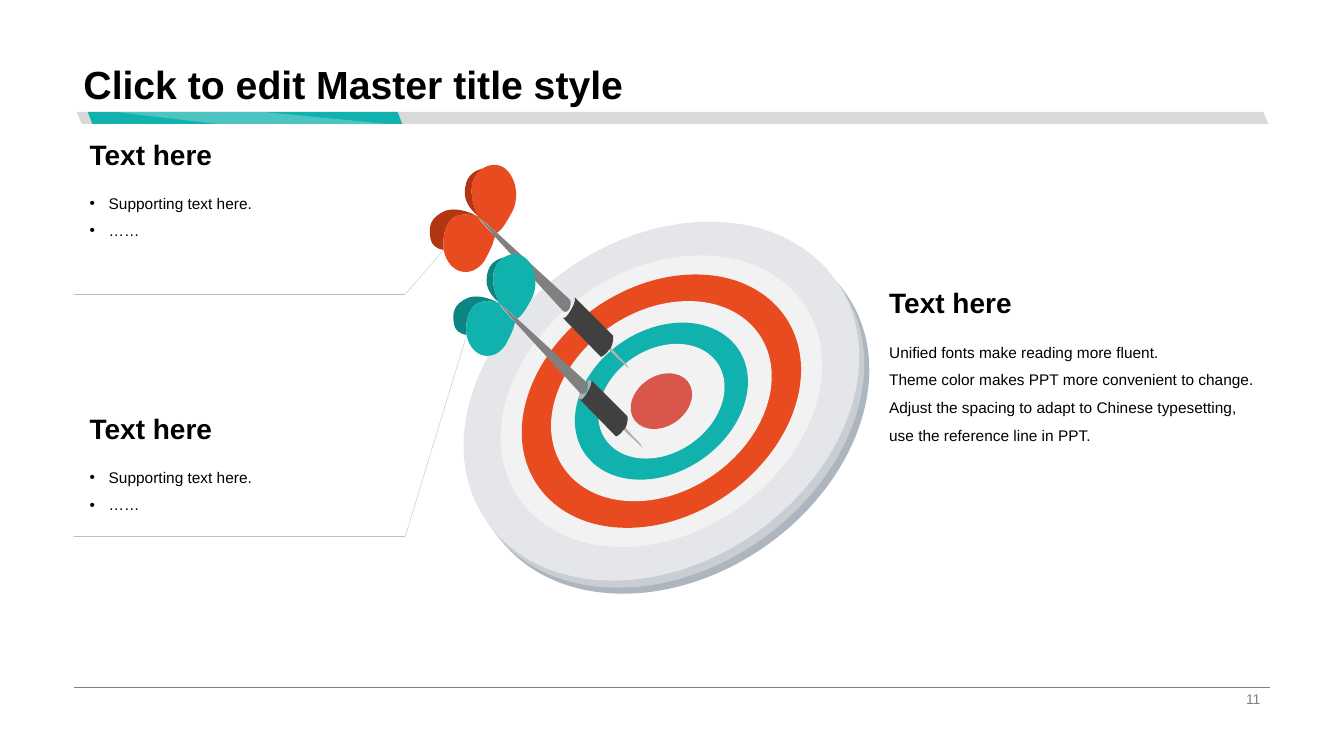
from lxml.etree import Element, SubElement
from pptx import Presentation
from pptx.dml.color import RGBColor
from pptx.enum.shapes import MSO_CONNECTOR as Connector, MSO_SHAPE as Shape
from pptx.enum.text import MSO_ANCHOR as Anchor, PP_ALIGN as Align
from pptx.oxml.ns import qn
from pptx.util import Inches, Pt

BLACK, WHITE, GREY, PALE = "000000", "FFFFFF", "808080", "F2F2F2"
TEAL, DARK_TEAL = "11B2AE", "0D8683"
ORANGE, DARK_ORANGE = "E84B1F", "B33612"
RING = [(1.9, 0), (1.63, 0.98, 0.57, 1.78, -0.48, 1.78),
        (-1.53, 1.78, -2.17, 0.98, -1.9, 0),
        (-1.63, -0.98, -0.57, -1.78, 0.48, -1.78),
        (1.53, -1.78, 2.17, -0.98, 1.9, 0)]
RING_WIDTH = 4.32

DART_POINT = [(1.5, 1.52), (1.47, 1.47), (1.38, 1.38, 1.34, 1.33, 1.32, 1.31), (1.3, 1.33),
              (1.37, 1.4, 1.46, 1.48, 1.5, 1.52)]
BARREL = [(1.34, 1.19), (0.96, 0.81), (0.97, 0.82, 0.96, 0.88, 0.92, 0.94),
          (0.89, 0.99, 0.86, 1.03, 0.84, 1.01), (1.22, 1.4),
          (1.22, 1.4, 1.26, 1.39, 1.3, 1.33), (1.32, 1.31),
          (1.35, 1.25, 1.34, 1.19, 1.34, 1.19)]
COLLAR = [(0.96, 0.81), (0.95, 0.8, 0.94, 0.81, 0.92, 0.83),
          (0.94, 0.84, 0.93, 0.88, 0.92, 0.93), (0.9, 0.96, 0.87, 0.96, 0.84, 0.95),
          (0.84, 0.98, 0.83, 1, 0.84, 1.01), (0.86, 1.03, 0.89, 0.99, 0.92, 0.94),
          (0.96, 0.88, 0.97, 0.82, 0.96, 0.81)]
LEFT_BACK = [(-0.29, 0.07), (-0.24, -0.02, -0.11, -0.03, 0, 0.01),
             (-0.1, -0.05, -0.23, -0.08, -0.32, -0.05),
             (-0.48, 0.02, -0.49, 0.11, -0.47, 0.23),
             (-0.46, 0.29, -0.41, 0.33, -0.34, 0.34),
             (-0.35, 0.25, -0.34, 0.15, -0.29, 0.07)]
TOP_BACK = [(-0.03, -0.38), (-0.01, -0.42, 0.02, -0.45, 0.05, -0.47),
            (-0.05, -0.44, -0.13, -0.39, -0.13, -0.22),
            (-0.13, -0.15, -0.08, -0.06, 0, 0),
            (-0.06, -0.12, -0.09, -0.28, -0.03, -0.38)]
LEFT_FRONT = [(0.13, 0.17), (0.07, 0.1, 0, 0.03, 0, 0.01),
              (-0.11, -0.03, -0.24, -0.02, -0.29, 0.07),
              (-0.34, 0.15, -0.35, 0.25, -0.34, 0.34),
              (-0.33, 0.4, -0.3, 0.46, -0.26, 0.5),
              (-0.16, 0.6, -0.01, 0.57, 0.07, 0.44),
              (0.11, 0.36, 0.15, 0.29, 0.16, 0.23), (0.17, 0.21)]
TOP_FRONT = [(-0.03, -0.38), (-0.09, -0.28, -0.06, -0.12, 0, 0.01),
             (0.09, 0.08), (0.19, 0.17), (0.24, 0.14, 0.28, 0.07, 0.33, -0.02),
             (0.41, -0.15, 0.39, -0.35, 0.29, -0.45),
             (0.22, -0.52, 0.13, -0.52, 0.05, -0.47),
             (0.02, -0.45, -0.01, -0.42, -0.03, -0.38)]
SHAFT = [(0.92, 0.85), (0.91, 0.83), (0.19, 0.17), (-0.01, 0), (0.17, 0.21), (0.84, 0.94),
         (0.87, 0.97, 0.89, 0.95, 0.91, 0.92), (0.92, 0.9, 0.92, 0.88, 0.92, 0.85)]


def paint(shape, color):
    """Give a shape a flat fill without line or shadow."""
    shape.shadow.inherit = False
    shape.fill.solid()
    shape.fill.fore_color.rgb = RGBColor.from_string(color)
    shape.line.fill.background()
    return shape


def bend(shape, segments):
    """Join the three points of each curved segment into one cubic curve."""
    line_ends = iter(list(shape._element.spPr.iter(qn("a:lnTo"))))
    for segment in segments:
        ends = [next(line_ends) for _ in range(len(segment) // 2)]
        if len(ends) == 3:
            curve = Element(qn("a:cubicBezTo"))
            ends[0].addprevious(curve)
            for end in ends:
                curve.append(end[0])
                end.getparent().remove(end)


def add_outline(slide, origin, outline, color, scale=1):
    """Draw a filled outline of lines and curves around an origin."""
    points = [(Inches(origin[0] + scale * segment[index]),
               Inches(origin[1] + scale * segment[index + 1]))
              for segment in outline for index in range(0, len(segment), 2)]
    builder = slide.shapes.build_freeform(*points[0], scale=1.0)
    builder.add_line_segments(points[1:], close=True)
    shape = paint(builder.convert_to_shape(), color)
    bend(shape, outline[1:])
    return shape


def add_line(slide, start, end, color, width):
    """Draw a thin straight line."""
    line = slide.shapes.add_connector(Connector.STRAIGHT, *map(Inches, start + end))
    line.line.color.rgb = RGBColor.from_string(color)
    line.line.width = Pt(width)
    SubElement(line._element.spPr, qn("a:effectLst"))


def add_text(slide, box, lines, size, color=BLACK, bold=False, anchor=Anchor.TOP,
             align=Align.LEFT, spacing=1.0, bullets=False):
    """Place paragraphs of one style in a box."""
    frame = slide.shapes.add_textbox(*map(Inches, box)).text_frame
    frame.word_wrap = True
    frame.vertical_anchor = anchor
    frame.text = "\n".join(lines)
    for paragraph in frame.paragraphs:
        paragraph.alignment = align
        paragraph.line_spacing = spacing
        if bullets:
            properties = paragraph._p.get_or_add_pPr()
            properties.set("marL", str(Inches(0.19)))
            properties.set("indent", str(-Inches(0.19)))
            SubElement(properties, qn("a:buFont")).set("typeface", "Arial")
            SubElement(properties, qn("a:buChar")).set("char", "•")
        for run in paragraph.runs:
            run.font.name = "Arial"
            run.font.size = Pt(size)
            run.font.bold = bold
            run.font.color.rgb = RGBColor.from_string(color)


def add_header(slide, left, top, width):
    """Draw the title and the slanted bar below it."""
    for offset, length, slant, color in ((0.03, 11.82, 0.42, "D9D9D9"),
                                         (0.14, 3.12, 0.39, TEAL)):
        bar = slide.shapes.add_shape(Shape.PARALLELOGRAM, Inches(left + offset),
                                     Inches(top + 1.11), Inches(length), Inches(0.12))
        bar.adjustments[0] = slant
        bar._element.spPr.find(qn("a:xfrm")).set("flipH", "1")
        paint(bar, color)
    sheen = add_outline(slide, (left + 0.41, top + 1.11),
                        [(2.71, 0.12), (1.46, 0), (0, 0), (1.02, 0.12)], WHITE)
    color_element = sheen._element.spPr.find(qn("a:solidFill"))[0]
    SubElement(color_element, qn("a:alpha")).set("val", "25000")
    add_text(slide, (left, top, width, 1.12), ["Click to edit Master title style"], 28,
             bold=True, anchor=Anchor.BOTTOM, spacing=0.9)


def add_footer(slide, left, top, width):
    """Draw the footer rule and the slide number."""
    add_line(slide, (left, top), (left + width, top), GREY, 0.5)
    add_text(slide, (left + width - 3.18, top, 3.18, 0.23), ["11"], 10, GREY,
             anchor=Anchor.MIDDLE, align=Align.RIGHT)


def add_target(slide, x, y):
    """Draw the board with its thick edge and rings around a centre."""
    for shift_x, shift_y, color in ((0.1, 0.13, "ADB5BF"), (0.05, 0.07, "C9CED5")):
        add_outline(slide, (x + shift_x, y + shift_y), RING, color)
    for width, color in ((4.32, "E4E6EA"), (3.51, PALE), (3.05, ORANGE), (2.41, PALE),
                         (1.89, TEAL), (1.38, PALE), (0.67, "D8574A")):
        add_outline(slide, (x, y), RING, color, width / RING_WIDTH)


def add_dart(slide, nock, scale, color, dark_color, collar=False):
    """Draw a dart from the place where its flights meet."""
    parts = [(DART_POINT, "B1B1B1"), (BARREL, "404040")]
    if collar:
        parts.append((COLLAR, "B1B1B1"))
    parts += [(LEFT_BACK, dark_color), (TOP_BACK, dark_color), (LEFT_FRONT, color),
              (TOP_FRONT, color), (SHAFT, GREY)]
    for outline, part_color in parts:
        add_outline(slide, nock, outline, part_color, scale)


def add_callout(slide, left, top, rule_top, flight):
    """Draw a heading with bullets, a rule and a leader to a dart."""
    add_text(slide, (left + 0.06, top + 0.49, 3.47, 1.02),
             ["Supporting text here.", "……"], 11, spacing=1.5, bullets=True)
    add_text(slide, (left + 0.06, top, 3.47, 0.48), ["Text here"], 20, bold=True,
             anchor=Anchor.MIDDLE)
    corner = (left + 3.29, rule_top)
    add_line(slide, (left, rule_top), corner, "BFBFBF", 0.25)
    add_line(slide, flight, corner, "BFBFBF", 0.25)


def add_summary(slide, left, top, width):
    """Place the heading and paragraphs beside the board."""
    add_text(slide, (left, top + 0.48, width, 1.59), [
        "Unified fonts make reading more fluent.",
        "Theme color makes PPT more convenient to change.",
        "Adjust the spacing to adapt to Chinese typesetting, use the reference line in PPT.",
    ], 11, spacing=1.5)
    add_text(slide, (left, top, width, 0.48), ["Text here"], 20, bold=True)


def main():
    """Build and save the slide."""
    presentation = Presentation()
    presentation.slide_width, presentation.slide_height = Inches(13.33), Inches(7.5)
    slide = presentation.slides.add_slide(presentation.slide_layouts[6])
    add_header(slide, 0.73, 0, 11.87)
    add_footer(slide, 0.73, 6.82, 11.87)
    add_target(slide, 6.56, 3.98)
    add_dart(slide, (4.74, 2.14), 1, ORANGE, DARK_ORANGE)
    add_dart(slide, (4.95, 3), 0.95, TEAL, DARK_TEAL, collar=True)
    add_callout(slide, 0.73, 1.29, 2.92, (4.4, 2.48))
    add_callout(slide, 0.73, 4.01, 5.32, (4.63, 3.32))
    add_summary(slide, 8.72, 2.78, 3.88)
    presentation.save("out.pptx")


if __name__ == "__main__":
    main()
